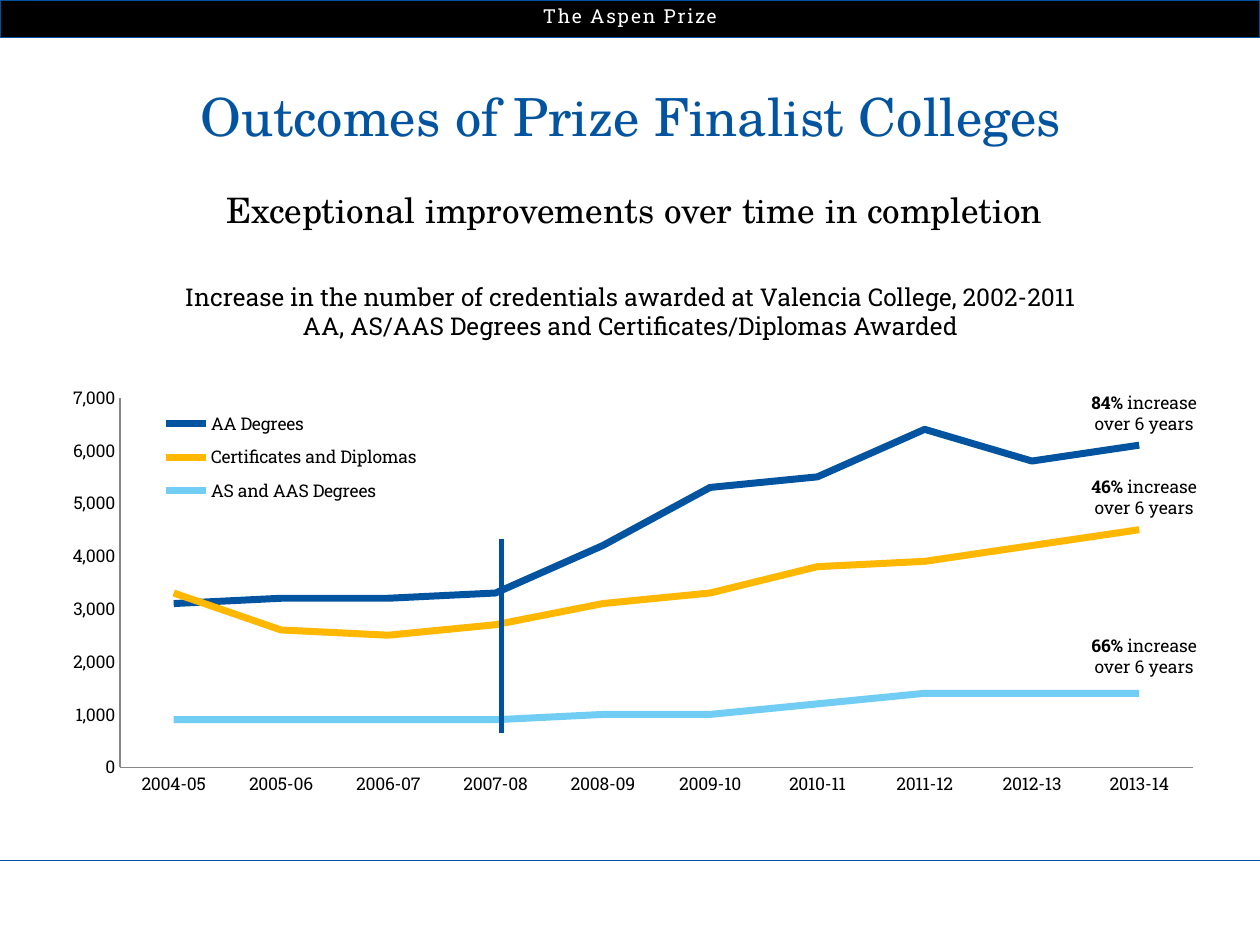
from lxml import etree
from pptx import Presentation
from pptx.chart.data import CategoryChartData
from pptx.dml.color import RGBColor
from pptx.enum.chart import XL_CHART_TYPE, XL_LEGEND_POSITION, XL_MARKER_STYLE, XL_TICK_MARK
from pptx.enum.shapes import MSO_CONNECTOR, MSO_SHAPE
from pptx.enum.text import MSO_ANCHOR, MSO_AUTO_SIZE, PP_ALIGN
from pptx.oxml.ns import qn
from pptx.util import Cm, Pt

LINE_CHART = XL_CHART_TYPE.LINE
LEGEND_RIGHT = XL_LEGEND_POSITION.RIGHT
NO_MARKER = XL_MARKER_STYLE.NONE
NO_TICKS = XL_TICK_MARK.NONE
STRAIGHT = MSO_CONNECTOR.STRAIGHT
RECTANGLE = MSO_SHAPE.RECTANGLE
TOP = MSO_ANCHOR.TOP
FIXED_SIZE = MSO_AUTO_SIZE.NONE
CENTER = PP_ALIGN.CENTER

BLACK = RGBColor(0, 0, 0)
WHITE = RGBColor(0xFF, 0xFF, 0xFF)
BLUE = RGBColor(0x03, 0x54, 0xA0)
RULE_BLUE = RGBColor(0x00, 0x52, 0x9F)
YELLOW = RGBColor(0xFF, 0xB7, 0x00)
SKY = RGBColor(0x72, 0xCD, 0xF4)
AXIS_GRAY = RGBColor(0x86, 0x86, 0x86)

SLAB = "Roboto Slab"
SCHOLA = "TeX Gyre Schola"

YEARS = [f"{year}-{(year + 1) % 100:02}" for year in range(2004, 2014)]
AWARDS = [
    ("AA Degrees", BLUE,
     [3100, 3200, 3200, 3300, 4200, 5300, 5500, 6400, 5800, 6100]),
    ("Certificates and Diplomas", YELLOW,
     [3300, 2600, 2500, 2700, 3100, 3300, 3800, 3900, 4200, 4500]),
    ("AS and AAS Degrees", SKY,
     [900, 900, 900, 900, 1000, 1000, 1200, 1400, 1400, 1400]),
]
INCREASES = [("84% ", 7.77), ("46% ", 9.47), ("66% ", 12.67)]


def add_run(paragraph, text, size, font=SLAB, color=BLACK, bold=False):
    run = paragraph.add_run()
    run.text = text
    run.font.size = Pt(size)
    run.font.name = font
    run.font.color.rgb = color
    run.font.bold = bold
    return run


def centered_paragraph(shape):
    """Set up the shape's text frame and return its first paragraph."""
    frame = shape.text_frame
    frame.word_wrap = True
    frame.auto_size = FIXED_SIZE
    frame.vertical_anchor = TOP
    paragraph = frame.paragraphs[0]
    paragraph.alignment = CENTER
    return paragraph


def add_text_box(slide, left, top, width, height):
    box = slide.shapes.add_textbox(Cm(left), Cm(top), Cm(width), Cm(height))
    return centered_paragraph(box)


def add_rule(slide, x1, y1, x2, y2, width):
    rule = slide.shapes.add_connector(STRAIGHT, Cm(x1), Cm(y1), Cm(x2), Cm(y2))
    rule.line.color.rgb = RULE_BLUE
    rule.line.width = Pt(width)
    etree.SubElement(rule.element.spPr, qn("a:effectLst"))


def add_header(slide):
    band = slide.shapes.add_shape(RECTANGLE, 0, 0, Cm(25.4), Cm(0.76))
    band.shadow.inherit = False
    band.fill.solid()
    band.fill.fore_color.rgb = BLACK
    band.line.color.rgb = RULE_BLUE
    band.line.width = Pt(0.75)
    label = add_text_box(slide, 0, -0.03, 25.4, 0.74)
    run = add_run(label, "The Aspen Prize", 11, color=WHITE)
    run.font._element.set("spc", "100")


def add_headings(slide):
    title = slide.shapes.title
    title.left, title.top = Cm(0.56), Cm(1.57)
    title.width, title.height = Cm(24.31), Cm(1.55)
    add_run(centered_paragraph(title), "Outcomes of Prize Finalist Colleges",
            30, SCHOLA, BLUE)

    subtitle = add_text_box(slide, 1.04, 3.68, 23.5, 1.12)
    add_run(subtitle, "Exceptional improvements over time in completion", 20, SCHOLA)

    caption = add_text_box(slide, 2.34, 5.56, 20.75, 1.45)
    add_run(caption, "Increase in the number of credentials awarded at "
                     "Valencia College, 2002-2011", 14)
    caption.add_line_break()
    add_run(caption, "AA, AS/AAS Degrees and Certificates/Diplomas Awarded", 14)


def manual_layout(x, y, width, height, inner=False):
    """Build a c:layout from fractions of the chart's size."""
    layout = etree.Element(qn("c:layout"))
    manual = etree.SubElement(layout, qn("c:manualLayout"))
    settings = [("xMode", "edge"), ("yMode", "edge"),
                ("x", x), ("y", y), ("w", width), ("h", height)]
    if inner:
        settings.insert(0, ("layoutTarget", "inner"))
    for tag, value in settings:
        etree.SubElement(manual, qn(f"c:{tag}")).set("val", str(value))
    return layout


def set_layout(parent, layout, position):
    for old in parent.findall(qn("c:layout")):
        parent.remove(old)
    parent.insert(position, layout)


def format_axis(axis):
    axis.has_major_gridlines = False
    axis.major_tick_mark = NO_TICKS
    axis.minor_tick_mark = NO_TICKS
    axis.format.line.color.rgb = AXIS_GRAY
    axis.format.line.width = Pt(0.75)


def add_awards_chart(slide):
    data = CategoryChartData(number_format="#,##0")
    data.categories = YEARS
    for name, _, values in AWARDS:
        data.add_series(name, values)
    chart = slide.shapes.add_chart(LINE_CHART, Cm(1.27), Cm(7.77),
                                   Cm(23.01), Cm(8.28), data).chart
    chart.has_title = False
    chart.font.size = Pt(10)
    chart.font.name = SLAB
    chart.font.color.rgb = BLACK

    format_axis(chart.category_axis)
    counts = chart.value_axis
    format_axis(counts)
    counts.minimum_scale, counts.maximum_scale = 0, 7000
    counts.major_unit = 1000
    counts.tick_labels.number_format = "#,##0"
    counts.tick_labels.number_format_is_linked = False

    plot = chart.plots[0]
    plot.vary_by_categories = False
    for series, (_, color, _) in zip(plot.series, AWARDS):
        series.smooth = False
        series.marker.style = NO_MARKER
        series.format.line.color.rgb = color
        series.format.line.width = Pt(4)

    chart.has_legend = True
    chart.legend.position = LEGEND_RIGHT
    chart.legend.include_in_layout = True
    set_layout(chart.legend._element, manual_layout(0.08, 0.04, 0.24, 0.27), 1)
    plot_area = chart._chartSpace.chart.plotArea
    set_layout(plot_area, manual_layout(0.05, 0.03, 0.94, 0.9, inner=True), 0)


def add_increase(slide, percent, top):
    note = add_text_box(slide, 21.44, top, 3.25, 1.12)
    add_run(note, percent, 10, bold=True)
    add_run(note, "increase over 6 years", 10)


def main():
    presentation = Presentation()
    presentation.slide_width, presentation.slide_height = Cm(25.4), Cm(19.05)
    slide = presentation.slides.add_slide(presentation.slide_layouts[5])
    add_header(slide)
    add_rule(slide, 0, 17.35, 25.4, 17.35, 0.5)
    add_headings(slide)
    add_awards_chart(slide)
    for percent, top in INCREASES:
        add_increase(slide, percent, top)
    add_rule(slide, 10.11, 10.87, 10.11, 14.78, 3)
    presentation.save("out.pptx")


if __name__ == "__main__":
    main()
